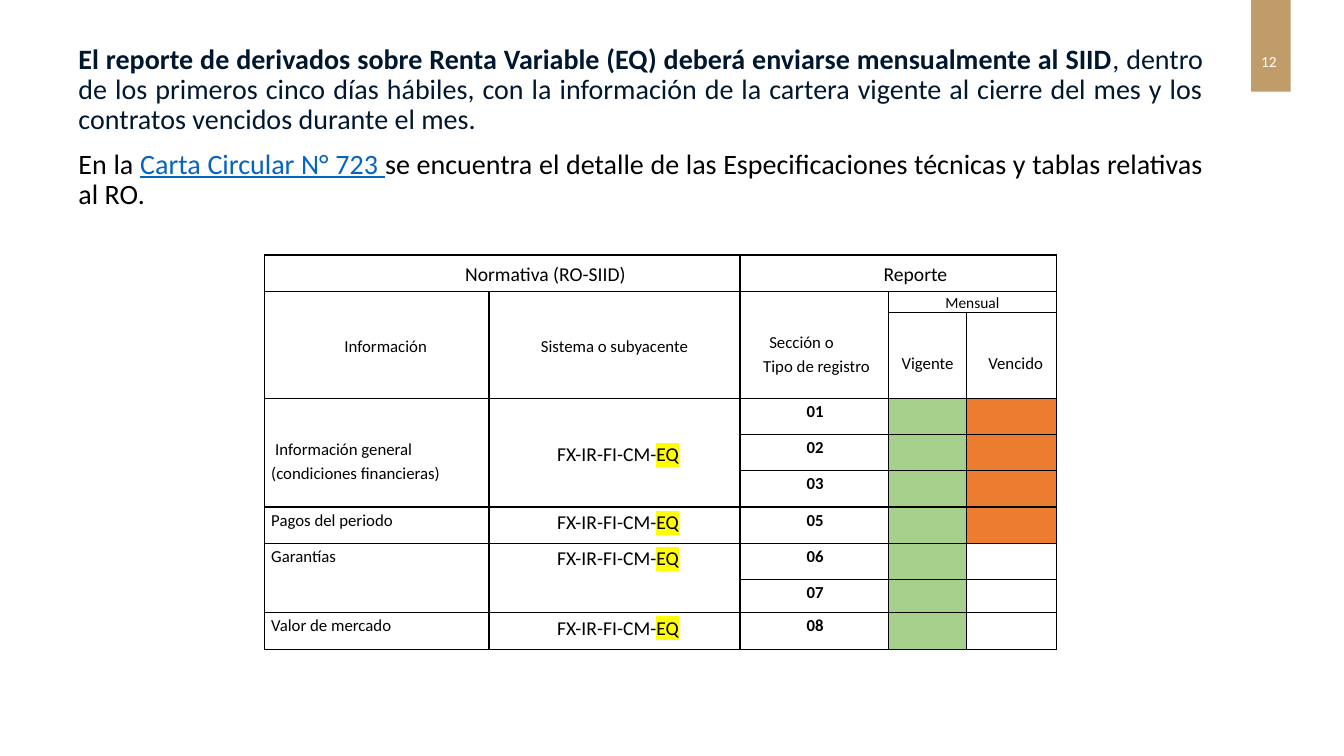
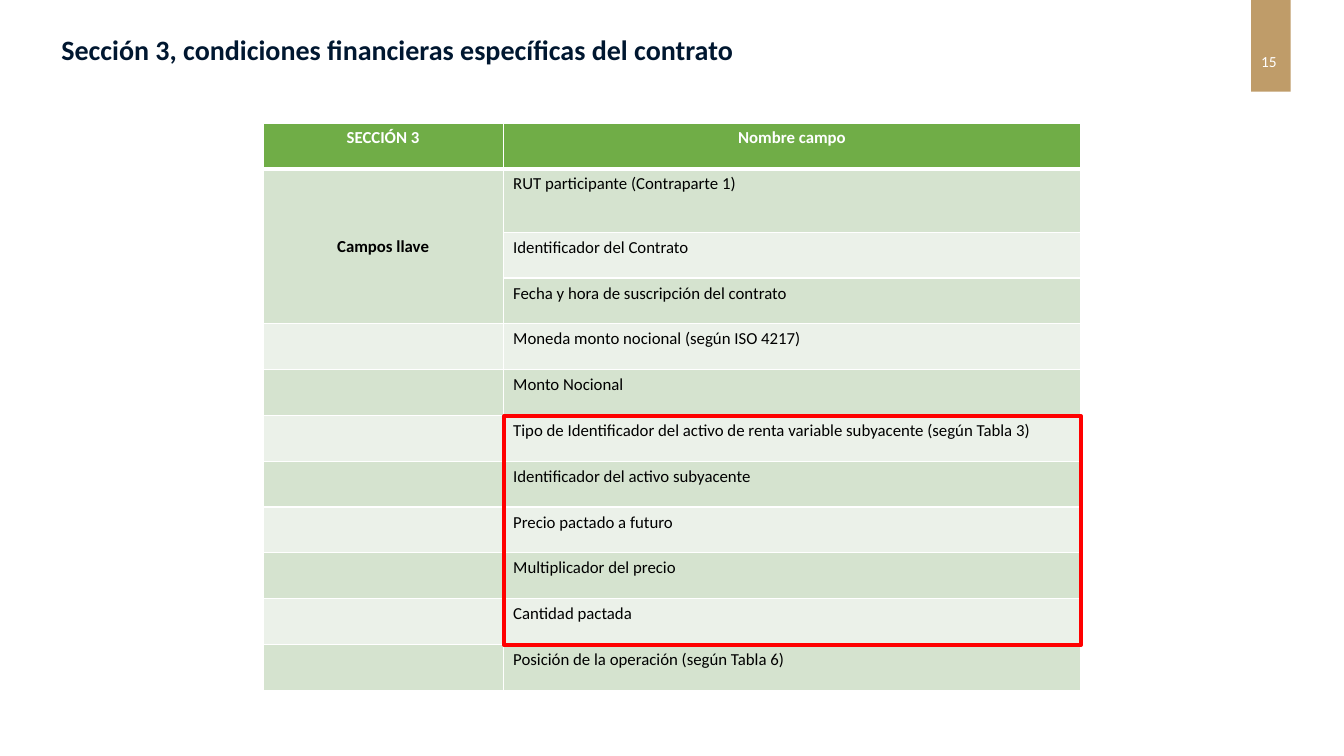
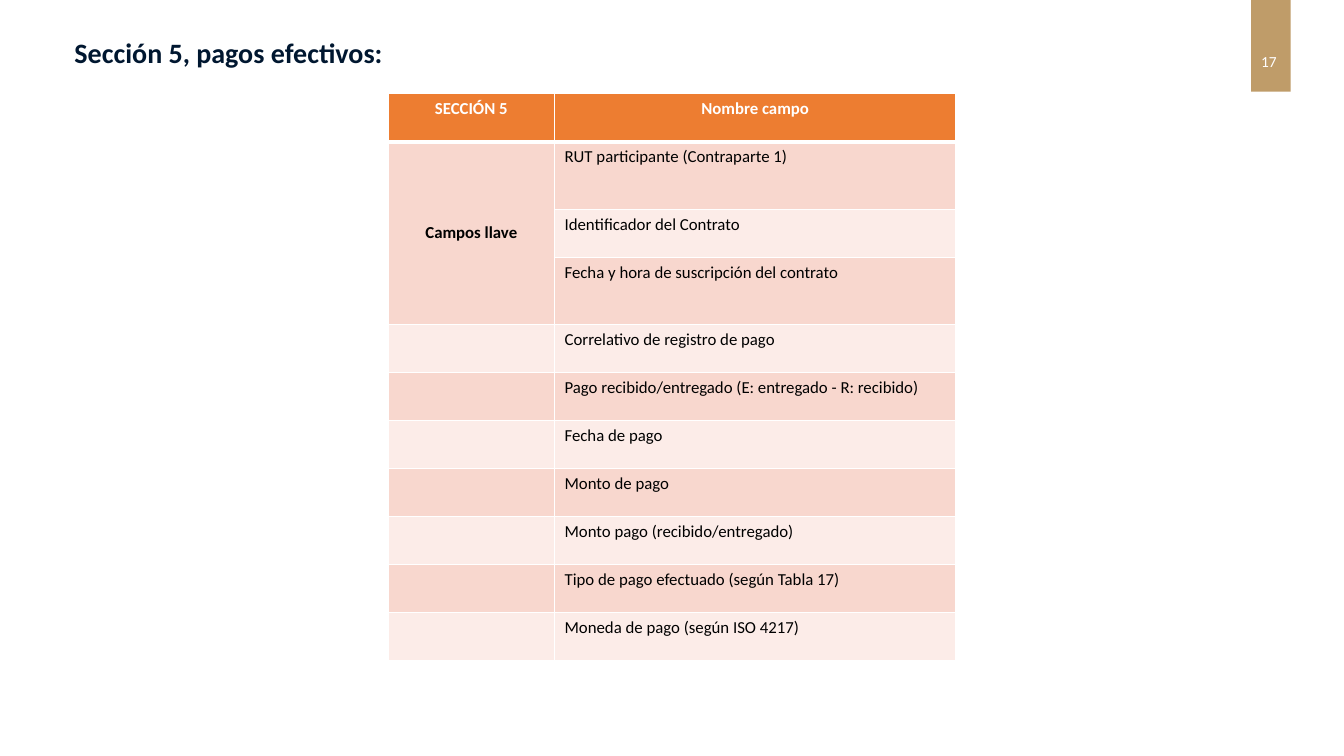
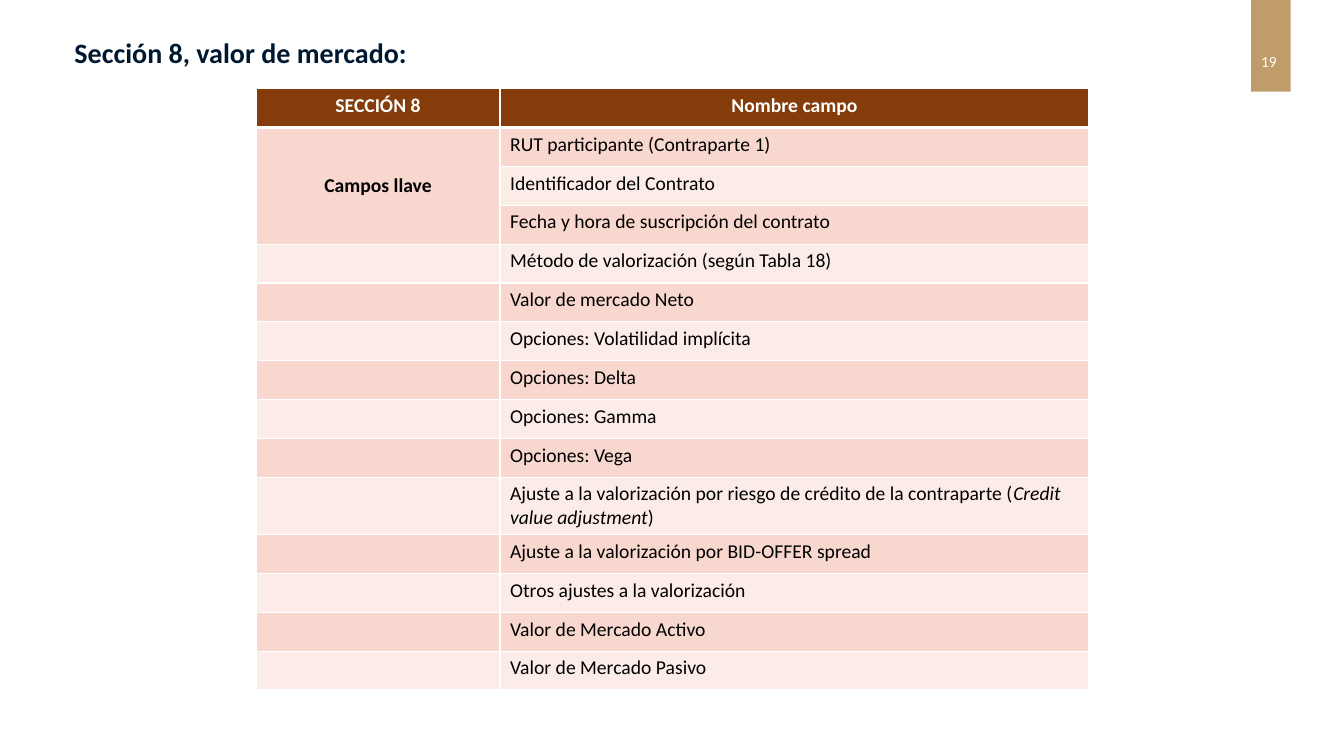
from lxml.etree import SubElement
from pptx import Presentation
from pptx.dml.color import RGBColor
from pptx.enum.shapes import MSO_SHAPE as Shape
from pptx.enum.text import MSO_ANCHOR as Anchor, PP_ALIGN as Align
from pptx.oxml.ns import qn
from pptx.util import Inches, Pt

WHITE = RGBColor(0xFF, 0xFF, 0xFF)
BLACK = RGBColor(0x00, 0x00, 0x00)
NAVY = RGBColor(0x00, 0x17, 0x30)
GOLD = RGBColor(0xBF, 0x9C, 0x69)
LINK_BLUE = RGBColor(0x05, 0x63, 0xC1)
YELLOW = RGBColor(0xFF, 0xFF, 0x00)
RED = RGBColor(0xFF, 0x00, 0x00)
CURRENT_GREEN = RGBColor(0xA8, 0xD0, 0x8D)
EXPIRED_ORANGE = RGBColor(0xEC, 0x7C, 0x30)
GREEN = RGBColor(0x70, 0xAD, 0x47)
ORANGE = RGBColor(0xED, 0x7D, 0x31)
BROWN = RGBColor(0x84, 0x3C, 0x0B)
GREEN_BANDS = (RGBColor(0xEB, 0xF1, 0xE9), RGBColor(0xD5, 0xE3, 0xCF))
ORANGE_BANDS = (RGBColor(0xFC, 0xEC, 0xE8), RGBColor(0xF8, 0xD7, 0xCE))
FONT = "Calibri"
KEY_FIELDS = [
    "RUT participante (Contraparte 1)",
    "Identificador del Contrato",
    "Fecha y hora de suscripción del contrato",
]


def fill_para(para, content, size, color, bold=False, align=Align.LEFT, spacing=1.0):
    para.alignment = align
    para.line_spacing = spacing
    para.font.name = FONT
    para.font.size = Pt(size)
    para.font.color.rgb = color
    para.font.bold = bold
    for text, style in [(content, {})] if isinstance(content, str) else content:
        span = para.add_run()
        span.text = text
        for name in ("bold", "italic", "underline"):
            if name in style:
                setattr(span.font, name, style[name])
        if "color" in style:
            span.font.color.rgb = style["color"]
        if "highlight" in style:
            mark = SubElement(span.font._element, qn("a:highlight"))
            SubElement(mark, qn("a:srgbClr"), val=str(style["highlight"]))


def add_text(page, left, top, width, height, paras, size, color, **style):
    box = page.shapes.add_textbox(Inches(left), Inches(top), Inches(width), Inches(height))
    frame = box.text_frame
    frame.word_wrap = True
    for index, content in enumerate(paras):
        para = frame.add_paragraph() if index else frame.paragraphs[0]
        if index:
            para.space_before = Pt(10)
        fill_para(para, content, size, color, **style)


def add_rect(page, left, top, width, height, fill=None, line=None):
    rect = page.shapes.add_shape(
        Shape.RECTANGLE, Inches(left), Inches(top), Inches(width), Inches(height))
    rect.shadow.inherit = False
    if fill is None:
        rect.fill.background()
    else:
        rect.fill.solid()
        rect.fill.fore_color.rgb = fill
    if line is None:
        rect.line.fill.background()
    else:
        rect.line.color.rgb = line
        rect.line.width = Pt(3)


def add_page(deck, number):
    page = deck.slides.add_slide(deck.slide_layouts[6])
    add_rect(page, 12.41, 0, 0.39, 0.91, fill=GOLD)
    add_text(page, 12.2, 0.47, 0.77, 0.37, [str(number)], 11, WHITE, align=Align.CENTER)
    return page


def add_heading(page, left, top, width, paras, bold=True):
    add_text(page, left, top, width, 0.79, paras, 20, NAVY,
             bold=bold, align=Align.JUSTIFY, spacing=0.9)


def add_grid(page, left, top, widths, heights, line):
    frame = page.shapes.add_table(
        len(heights), len(widths), Inches(left), Inches(top),
        Inches(sum(widths)), Inches(sum(heights)))
    table = frame.table
    table.first_row = table.horz_banding = False
    for column, width in zip(table.columns, widths):
        column.width = Inches(width)
    for row, height in zip(table.rows, heights):
        row.height = Inches(height)
    for cell in table.iter_cells():
        set_borders(cell, line)
        cell.fill.background()
        cell.margin_top = cell.margin_bottom = 0
    return table


def set_borders(cell, color):
    properties = cell._tc.get_or_add_tcPr()
    for side in ("L", "R", "T", "B"):
        border = SubElement(properties, qn(f"a:ln{side}"), w=str(Pt(1)))
        fill = SubElement(border, qn("a:solidFill"))
        SubElement(fill, qn("a:srgbClr"), val=str(color))


def thicken_bottom(cell):
    cell._tc.tcPr.find(qn("a:lnB")).set("w", str(Pt(3)))


def paint(cell, color):
    cell.fill.solid()
    cell.fill.fore_color.rgb = color


def write_report_cell(cell, content, indents=(0,), size=12, top=0, bold=False,
                      align=Align.CENTER, anchor=Anchor.TOP):
    cell.margin_left = cell.margin_right = 0
    cell.margin_top = Inches(top)
    cell.vertical_anchor = anchor
    lines = content if len(indents) > 1 else [content]
    for index, (line, indent) in enumerate(zip(lines, indents)):
        para = cell.text_frame.add_paragraph() if index else cell.text_frame.paragraphs[0]
        para._p.get_or_add_pPr().set("marL", str(Inches(indent)))
        fill_para(para, line, size, BLACK, bold=bold, align=align, spacing=1.15)


def add_report_table(page):
    heights = [0.36, 0.19, 0.85] + [0.36] * 5 + [0.33, 0.36]
    table = add_grid(page, 2.62, 2.53, [2.23, 2.49, 1.47, 0.78, 0.89], heights, BLACK)
    for first, last in [((0, 0), (0, 1)), ((0, 2), (0, 4)), ((1, 0), (2, 0)),
                        ((1, 1), (2, 1)), ((1, 2), (2, 2)), ((1, 3), (1, 4)),
                        ((3, 0), (5, 0)), ((3, 1), (5, 1)), ((7, 0), (8, 0)),
                        ((7, 1), (8, 1))]:
        table.cell(*first).merge(table.cell(*last))

    middle = {"anchor": Anchor.MIDDLE}
    write_report_cell(table.cell(0, 0), "Normativa (RO-SIID)", (0.86,), 14, **middle)
    write_report_cell(table.cell(0, 2), "Reporte", (0.34,), 14, **middle)
    write_report_cell(table.cell(1, 0), "Información", (0.18,), **middle)
    write_report_cell(table.cell(1, 1), "Sistema o subyacente", **middle)
    write_report_cell(table.cell(1, 2), ["Sección o", "Tipo de registro"], (0.29, 0.23),
                      top=0.38, align=Align.LEFT)
    write_report_cell(table.cell(1, 3), "Mensual", size=11)
    write_report_cell(table.cell(2, 3), "Vigente", top=0.38)
    write_report_cell(table.cell(2, 4), "Vencido", (0.08,), top=0.38)

    write_report_cell(table.cell(3, 0), ["Información general", "(condiciones financieras)"],
                      (0.11, 0.07), top=0.38, align=Align.LEFT)
    for row, text in [(6, "Pagos del periodo"), (7, "Garantías"), (9, "Valor de mercado")]:
        write_report_cell(table.cell(row, 0), text, (0.07,), align=Align.LEFT)
    systems = [("FX-IR-FI-CM-", {}), ("EQ", {"highlight": YELLOW})]
    for row, top in [(3, 0.41), (6, 0), (7, 0), (9, 0)]:
        write_report_cell(table.cell(row, 1), systems, (0.07,), 14, top=top)
    for row, code in enumerate(["01", "02", "03", "05", "06", "07", "08"], start=3):
        write_report_cell(table.cell(row, 2), code, (0.02,), bold=True)
        paint(table.cell(row, 3), CURRENT_GREEN)
        if row < 7:
            paint(table.cell(row, 4), EXPIRED_ORANGE)


def write_field_cell(cell, content, size, color=BLACK, **style):
    cell.margin_top = cell.margin_bottom = Inches(0.05)
    fill_para(cell.text_frame.paragraphs[0], content, size, color, **style)


def add_field_table(page, section, fields, left, top, widths, height, tall_rows,
                    header, bands, size=12):
    count = len(fields) + 1
    regular = (height - sum(tall_rows.values())) / (count - len(tall_rows))
    heights = [tall_rows.get(row, regular) for row in range(count)]
    table = add_grid(page, left, top, widths, heights, WHITE)
    for column, text in enumerate([f"SECCIÓN {section}", "Nombre campo"]):
        cell = table.cell(0, column)
        paint(cell, header)
        thicken_bottom(cell)
        write_field_cell(cell, text, size, WHITE, bold=True, align=Align.CENTER)
    for row, field in enumerate(fields, start=1):
        for column in range(2):
            paint(table.cell(row, column), bands[row % 2])
        write_field_cell(table.cell(row, 1), field, size)
    key = table.cell(1, 0)
    key.merge(table.cell(len(KEY_FIELDS), 0))
    key.vertical_anchor = Anchor.MIDDLE
    write_field_cell(key, "Campos llave", size, bold=True, align=Align.CENTER)


def add_report_page(deck):
    page = add_page(deck, 12)
    add_heading(page, 0.68, 0.4, 11.35, [
        [("El reporte de derivados sobre Renta Variable (EQ) deberá enviarse mensualmente "
          "al SIID", {"bold": True}),
         (", dentro de los primeros cinco días hábiles, con la información de la cartera "
          "vigente al cierre del mes y los contratos vencidos durante el mes.", {})],
        [("En la ", {"color": BLACK}),
         ("Carta Circular N° 723 ", {"color": LINK_BLUE, "underline": True}),
         ("se encuentra el detalle de las Especificaciones técnicas y tablas relativas "
          "al RO.", {"color": BLACK})],
    ], bold=False)
    add_report_table(page)


def add_conditions_page(deck):
    page = add_page(deck, 15)
    add_heading(page, 0.51, 0.31, 11.69,
                ["Sección 3, condiciones financieras específicas del contrato"])
    fields = KEY_FIELDS + [
        "Moneda monto nocional (según ISO 4217)",
        "Monto Nocional",
        "Tipo de Identificador del activo de renta variable subyacente (según Tabla 3)",
        "Identificador del activo subyacente",
        "Precio pactado a futuro",
        "Multiplicador del precio",
        "Cantidad pactada",
        "Posición de la operación (según Tabla 6)",
    ]
    add_field_table(page, 3, fields, 2.61, 1.22, [2.38, 5.73], 5.63, {1: 0.63},
                    GREEN, GREEN_BANDS)
    add_rect(page, 5, 4.13, 5.72, 2.27, line=RED)


def add_payments_page(deck):
    page = add_page(deck, 17)
    add_heading(page, 0.64, 0.34, 11.35, ["Sección 5, pagos efectivos:"])
    fields = KEY_FIELDS + [
        "Correlativo de registro de pago",
        "Pago recibido/entregado (E: entregado - R: recibido)",
        "Fecha de pago",
        "Monto de pago",
        "Monto pago (recibido/entregado)",
        "Tipo de pago efectuado (según Tabla 17)",
        "Moneda de pago (según ISO 4217)",
    ]
    add_field_table(page, 5, fields, 3.85, 0.93, [1.65, 3.98], 5.63, {1: 0.67, 3: 0.67},
                    ORANGE, ORANGE_BANDS)


def add_valuation_page(deck):
    page = add_page(deck, 19)
    add_heading(page, 0.64, 0.34, 11.35, ["Sección 8, valor de mercado:"])
    fields = KEY_FIELDS + [
        "Método de valorización (según Tabla 18)",
        "Valor de mercado Neto",
        "Opciones: Volatilidad implícita",
        "Opciones: Delta",
        "Opciones: Gamma",
        "Opciones: Vega",
        [("Ajuste a la valorización por riesgo de crédito de la contraparte (", {}),
         ("Credit value adjustment", {"italic": True}),
         (")", {})],
        "Ajuste a la valorización por BID-OFFER spread",
        "Otros ajustes a la valorización",
        "Valor de Mercado Activo",
        "Valor de Mercado Pasivo",
    ]
    add_field_table(page, 8, fields, 2.54, 0.88, [2.42, 5.84], 5.97, {10: 0.57},
                    BROWN, ORANGE_BANDS, size=14)


def main():
    deck = Presentation()
    deck.slide_width = Inches(13.33)
    deck.slide_height = Inches(7.5)
    add_report_page(deck)
    add_conditions_page(deck)
    add_payments_page(deck)
    add_valuation_page(deck)
    deck.save("out.pptx")


if __name__ == "__main__":
    main()
